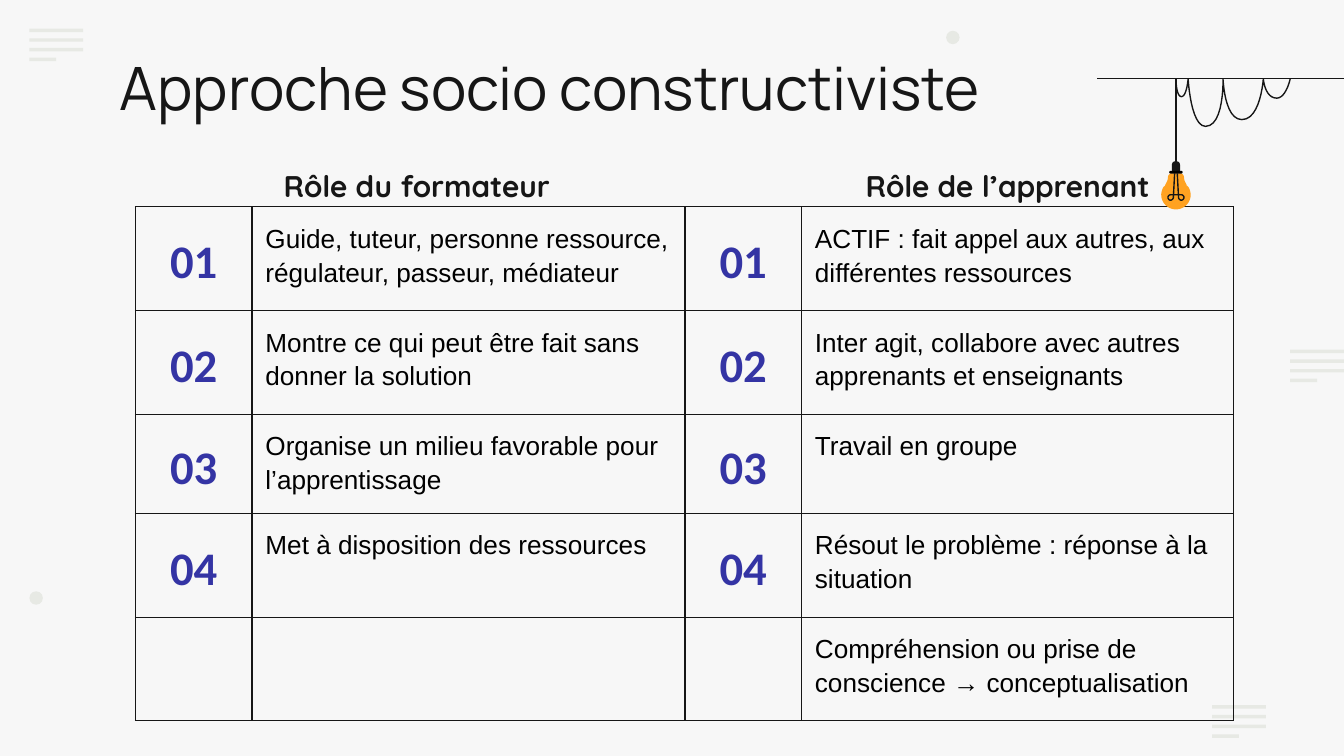
from pptx import Presentation
from pptx.dml.color import RGBColor
from pptx.enum.shapes import MSO_CONNECTOR, MSO_SHAPE
from pptx.enum.text import MSO_ANCHOR, PP_ALIGN
from pptx.oxml import parse_xml
from pptx.oxml.ns import nsdecls
from pptx.util import Pt

INK, PALE, ORANGE, BLUE = "161616", "E7E9E4", "FFA221", "3434A4"
rgb = RGBColor.from_string


def paint(sp, fill=None, line=None):
    sp.shadow.inherit = False
    if fill:
        sp.fill.solid()
        sp.fill.fore_color.rgb = rgb(fill)
    else:
        sp.fill.background()
    if line:
        sp.line.color.rgb = rgb(line)
        sp.line.width = Pt(0.75)
    else:
        sp.line.fill.background()


def trace(start, *segments):
    """Points along lines (x, y) and Bezier curves (x1, y1, x2, y2, x, y)."""
    pts = [start]
    for seg in segments:
        if len(seg) == 2:
            pts.append(seg)
            continue
        x0, y0 = pts[-1]
        x1, y1, x2, y2, x3, y3 = seg
        for i in range(1, 13):
            t = i / 12
            a, b, c, d = (1 - t) ** 3, 3 * t * (1 - t) ** 2, 3 * t * t * (1 - t), t ** 3
            pts.append((a * x0 + b * x1 + c * x2 + d * x3,
                        a * y0 + b * y1 + c * y2 + d * y3))
    return pts


prs = Presentation()
prs.slide_width, prs.slide_height = Pt(720), Pt(405)
s = prs.slides.add_slide(prs.slide_layouts[5])
s.background.fill.solid()
s.background.fill.fore_color.rgb = rgb("F7F7F7")

# Pale dots and stripes
for x, y in [(15.8, 316.8), (506.9, 16.5)]:
    sp = s.shapes.add_shape(MSO_SHAPE.OVAL, Pt(x), Pt(y), Pt(7.2), Pt(7.2))
    paint(sp, PALE)
for x, y in [(691.2, 187.3), (649.4, 377.8), (15.8, 15.3)]:
    for i, w in enumerate([28.8, 28.8, 28.8, 14.4]):
        sp = s.shapes.add_shape(MSO_SHAPE.RECTANGLE, Pt(x), Pt(y + 5.2 * i), Pt(w), Pt(1.9))
        paint(sp, PALE)

# Title
title = s.shapes.title
title.left, title.top, title.width, title.height = Pt(56.9), Pt(20.2), Pt(607), Pt(49)
tf = title.text_frame
tf.text = "Approche socio constructiviste"
tf.vertical_anchor = MSO_ANCHOR.TOP
tf.margin_left = tf.margin_right = tf.margin_top = tf.margin_bottom = Pt(7.2)
p = tf.paragraphs[0]
p.alignment = PP_ALIGN.LEFT
p.font.size, p.font.name, p.font.color.rgb = Pt(32), "Manrope", rgb(INK)

# Column headings
for text, x in [("Rôle du formateur", 144.9), ("Rôle de l’apprenant", 456.7)]:
    tf = s.shapes.add_textbox(Pt(x), Pt(79.9), Pt(180), Pt(31.7)).text_frame
    tf.word_wrap = True
    tf.margin_left = tf.margin_right = tf.margin_top = tf.margin_bottom = Pt(7.2)
    p = tf.paragraphs[0]
    p.text, p.line_spacing = text, 1.15
    p.font.size, p.font.name, p.font.bold = Pt(16), "Quicksand", True
    p.font.color.rgb = rgb(INK)

# Table of roles
rows = [
    ("01", "Guide, tuteur, personne ressource, régulateur, passeur, médiateur",
     "01", "ACTIF : fait appel aux autres, aux différentes ressources"),
    ("02", "Montre ce qui peut être fait sans donner la solution",
     "02", "Inter agit, collabore avec autres apprenants et enseignants"),
    ("03", "Organise un milieu favorable pour l’apprentissage",
     "03", "Travail en groupe"),
    ("04", "Met à disposition des ressources",
     "04", "Résout le problème : réponse à la situation"),
    ("", "", "", "Compréhension ou prise de conscience → conceptualisation"),
]
table = s.shapes.add_table(5, 4, Pt(72.6), Pt(110.8), Pt(588.2), Pt(272.8)).table
table.first_row = table.horz_banding = False
for col, w in zip(table.columns, [62.4, 232, 62.4, 231.4]):
    col.width = Pt(w)
for row, h in zip(table.rows, [55.6, 55.6, 50.4, 55.6, 55.6]):
    row.height = Pt(h)
for r, texts in enumerate(rows):
    for c, text in enumerate(texts):
        cell = table.cell(r, c)
        number = c % 2 == 0
        cell.margin_left = cell.margin_right = cell.margin_top = cell.margin_bottom = Pt(7.2)
        cell.vertical_anchor = MSO_ANCHOR.MIDDLE if number else MSO_ANCHOR.TOP
        p = cell.text_frame.paragraphs[0]
        p.text, p.line_spacing = text, 1.15
        p.alignment = PP_ALIGN.CENTER if number else PP_ALIGN.LEFT
        p.font.size, p.font.name = (Pt(25), "Calibri") if number else (Pt(14), "Arial")
        p.font.bold = number
        p.font.color.rgb = rgb(BLUE if number else "000000")
        tc_pr = cell._tc.get_or_add_tcPr()
        for side in "LRTB":
            tc_pr.append(parse_xml(
                f'<a:ln{side} {nsdecls("a")} w="{Pt(0.75)}"><a:solidFill>'
                f'<a:srgbClr val="{INK}"/></a:solidFill></a:ln{side}>'))
        cell.fill.background()

# Ceiling line and lamp cord
axis, ceiling = 630, 42.2
for x1, y1, x2, y2 in [(720, ceiling, 587.5, ceiling), (axis, ceiling, axis, 88.6)]:
    cx = s.shapes.add_connector(MSO_CONNECTOR.STRAIGHT, Pt(x1), Pt(y1), Pt(x2), Pt(y2))
    cx.line.color.rgb = rgb(INK)
    cx.line.width = Pt(0.75)
    cx._element.spPr.append(parse_xml(f'<a:effectLst {nsdecls("a")}/>'))

# Bulb halves, as offsets right of the cord, each mirrored to the left
cap = trace((0, 86.4), (1.4, 86.4, 2.2, 87.1, 2.2, 88.6), (2.2, 92.2))
glass = trace((0, 92.9), (2.9, 92.9), (2.9, 92.9, 4.3, 93.6, 4.3, 95),
              (4.3, 97.2, 5.8, 98.6, 5.8, 99.4), (6.6, 100.1),
              (7.2, 100.8, 7.9, 103, 7.9, 104.4), (7.9, 108.7, 4.3, 112.2, 0, 112.2))
filament = trace((0, 104.4), (2.9, 104.4), (3.6, 104.4, 4.3, 105.1, 4.3, 105.8),
                 (4.3, 106.6, 3.6, 107.3, 2.9, 107.3),
                 (2.2, 107.3, 1.4, 106.6, 1.4, 105.8), (0.7, 92.9))
outlines = []
for half, fill, line in [(cap, INK, None), (glass, ORANGE, None), (filament, None, INK)]:
    whole = [(-x, y) for x, y in reversed(half)] + half[1:]
    outlines.append(([(axis + x, y) for x, y in whole], fill, line))

# Hanging garland: control, lowest point, control, end, depth
swags = []
x = 691.2
for c1, low, c2, end, y in [(689, 684, 677.5, 676.8, 52.6),
                            (675.4, 665.3, 655.9, 655.2, 64.1),
                            (655.9, 645.8, 637.9, 636.5, 67.7),
                            (635.8, 632.9, 630, 630, 51.8)]:
    swags += [(x, ceiling, c1, y, low, y), (c2, y, end, ceiling, end, ceiling)]
    x = end
outlines.append((trace((691.2, ceiling), *swags), None, INK))

for pts, fill, line in outlines:
    pts = [(Pt(x), Pt(y)) for x, y in pts]
    fb = s.shapes.build_freeform(*pts[0])
    fb.add_line_segments(pts[1:], close=fill is not None)
    paint(fb.convert_to_shape(), fill, line)

# Bulb collar
sp = s.shapes.add_shape(MSO_SHAPE.ROUNDED_RECTANGLE, Pt(axis - 3.6), Pt(91.5), Pt(7.2), Pt(1.5))
sp.adjustments[0] = 0.5
paint(sp, "000000")

prs.save("out.pptx")
